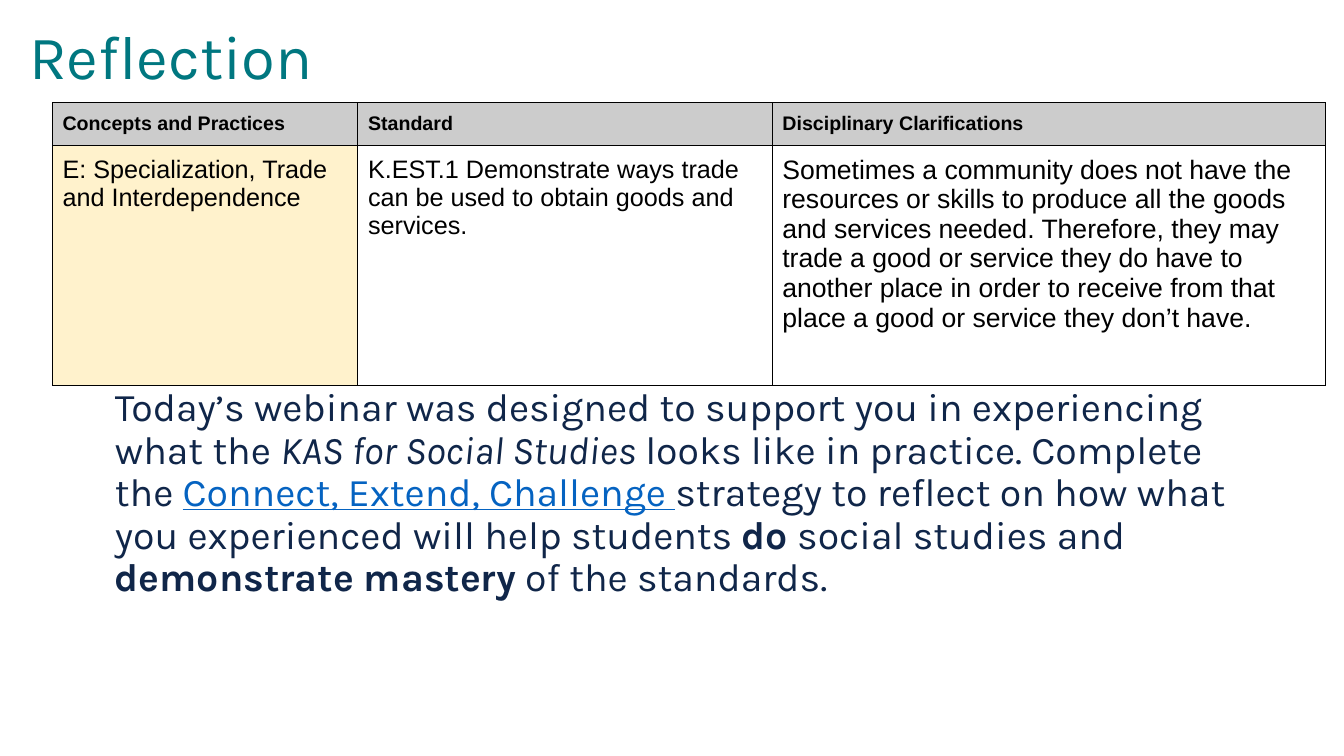
"""Build the Reflection slide with its standards table and closing prompt."""
from typing import NamedTuple

from lxml.etree import SubElement
from pptx import Presentation
from pptx.dml.color import RGBColor
from pptx.enum.text import MSO_ANCHOR, MSO_AUTO_SIZE, PP_ALIGN
from pptx.oxml.ns import qn
from pptx.util import Inches, Pt

TEAL, NAVY, LINK, BLACK = "007780", "102649", "0563C1", "000000"
GREY, CREAM, WHITE = "CCCCCC", "FFF2CC", "FFFFFF"


class Span(NamedTuple):
    text: str
    size: float
    hue: str = NAVY
    face: str = "Karla"
    style: dict = {}


class Box(NamedTuple):
    left: float
    top: float
    width: float
    height: float


class Entry(NamedTuple):
    span: Span
    fill: str


def tint(code: str) -> RGBColor:
    return RGBColor.from_string(code)


def write(para, spans: list[Span]) -> None:
    for span in spans:
        run = para.add_run()
        run.text = span.text
        run.font.color.rgb = tint(span.hue)
        looks = {"size": Pt(span.size), "name": span.face, "bold": False} | span.style
        for key, value in looks.items():
            setattr(run.font, key, value)


def place(shape, box: Box) -> None:
    for key, value in box._asdict().items():
        setattr(shape, key, Inches(value))


def fill_holder(holder, box: Box, spans: list[Span], anchor: MSO_ANCHOR,
                top: float = 0.05, indent: float = 0) -> None:
    place(holder, box)
    frame = holder.text_frame
    traits = {"word_wrap": True, "auto_size": MSO_AUTO_SIZE.NONE,
              "vertical_anchor": anchor, "margin_top": Inches(top)}
    for key, value in traits.items():
        setattr(frame, key, value)
    para = frame.paragraphs[0]
    props = para._p.get_or_add_pPr()
    props.set("marL", str(Inches(indent)))
    props.set("indent", "0")
    SubElement(props, qn("a:buNone"))
    for key, value in {"alignment": PP_ALIGN.LEFT, "line_spacing": 0.9,
                       "space_before": Pt(0)}.items():
        setattr(para, key, value)
    write(para, spans)


def draw_cell(cell, entry: Entry) -> None:
    for side in ("left", "right", "top", "bottom"):
        setattr(cell, f"margin_{side}", Inches(0.1))
    props = cell._tc.get_or_add_tcPr()
    for edge in ("lnL", "lnR", "lnT", "lnB"):
        line = SubElement(props, qn(f"a:{edge}"), w=str(Pt(0.75)))
        SubElement(SubElement(line, qn("a:solidFill")), qn("a:srgbClr"), val=BLACK)
    cell.fill.solid()
    cell.fill.fore_color.rgb = tint(entry.fill)
    write(cell.text_frame.paragraphs[0], [entry.span])


def draw_table(slide, box: Box, widths: list[float], heights: list[float],
               rows: list[list[Entry]]) -> None:
    area = [Inches(value) for value in box]
    table = slide.shapes.add_table(len(rows), len(widths), *area).table
    table.first_row = table.horz_banding = False
    for column, width in zip(table.columns, widths):
        column.width = Inches(width)
    for row, height, entries in zip(table.rows, heights, rows):
        row.height = Inches(height)
        for cell, entry in zip(row.cells, entries):
            draw_cell(cell, entry)


def head(text: str) -> Entry:
    return Entry(Span(text, 14, BLACK, "Arial", {"bold": True}), GREY)


def fact(text: str, fill: str = WHITE, size: float = 18) -> Entry:
    return Entry(Span(text, size, BLACK, "Arial"), fill)


ROWS = [
    [head("Concepts and Practices"), head("Standard"), head("Disciplinary Clarifications")],
    [fact("E: Specialization, Trade and Interdependence", CREAM),
     fact("K.EST.1 Demonstrate ways trade can be used to obtain goods and services."),
     fact("Sometimes a community does not have the resources or skills to produce all "
          "the goods and services needed. Therefore, they may trade a good or service "
          "they do have to another place in order to receive from that place a good or "
          "service they don’t have.", size=19)],
]
PROMPT = [
    Span("Today’s webinar was designed to support you in experiencing what the ", 28),
    Span("KAS for Social Studies", 28, style={"italic": True}),
    Span(" looks like in practice. Complete the ", 28),
    Span("Connect, Extend, Challenge ", 28, LINK, style={"underline": True}),
    Span("strategy to reflect on how what you experienced will help students ", 28),
    Span("do", 28, style={"bold": True}),
    Span(" social studies and ", 28),
    Span("demonstrate mastery", 28, style={"bold": True}),
    Span(" of the standards.", 28),
]


def main() -> None:
    deck = Presentation()
    deck.slide_width, deck.slide_height = Inches(13.33), Inches(7.5)
    slide = deck.slides.add_slide(deck.slide_layouts[1])
    title, body = slide.placeholders
    fill_holder(title, Box(0.19, -0.13, 11.5, 1.45), [Span("Reflection", 44, TEAL)],
                MSO_ANCHOR.MIDDLE)
    fill_holder(body, Box(0.92, 2, 11.5, 4.76), PROMPT, MSO_ANCHOR.TOP, 1.85, 0.12)
    draw_table(slide, Box(0.52, 1.02, 12.63, 2.8), [3.03, 4.11, 5.49], [0.42, 2.38], ROWS)
    deck.save("out.pptx")


if __name__ == "__main__":
    main()
